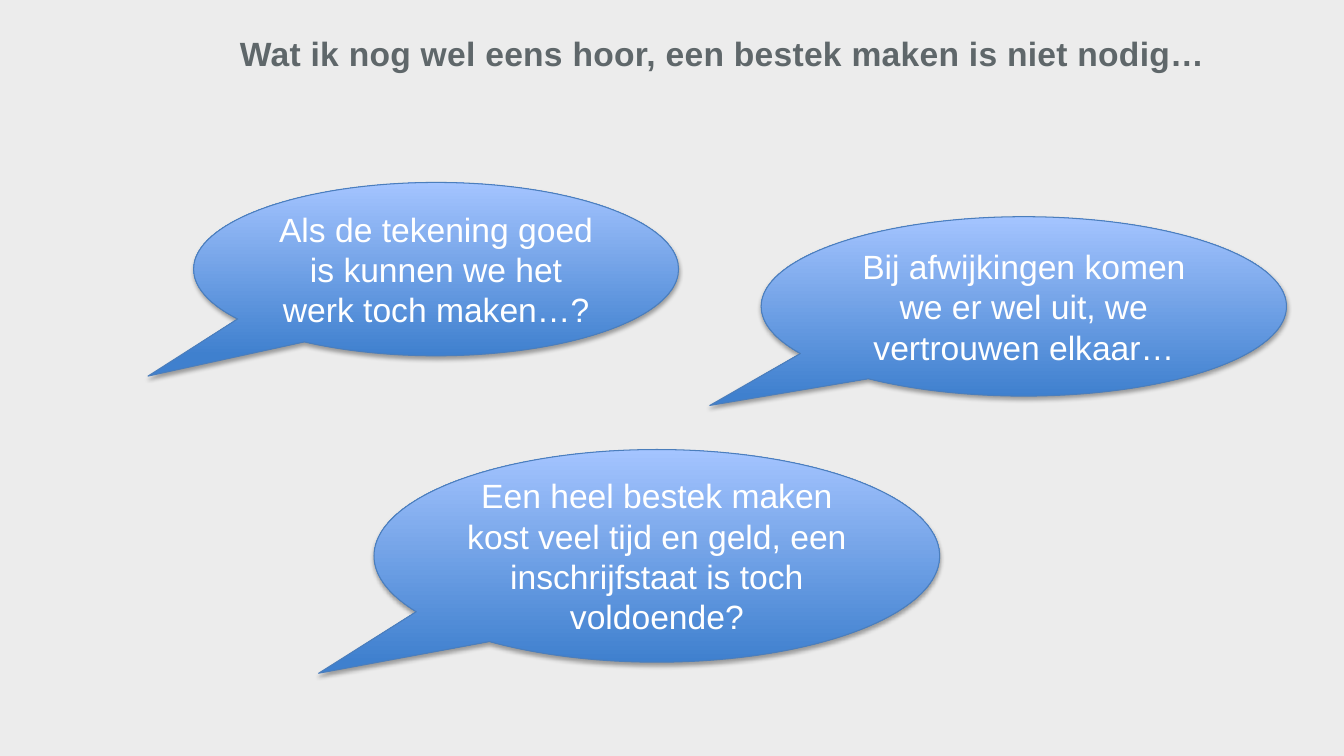
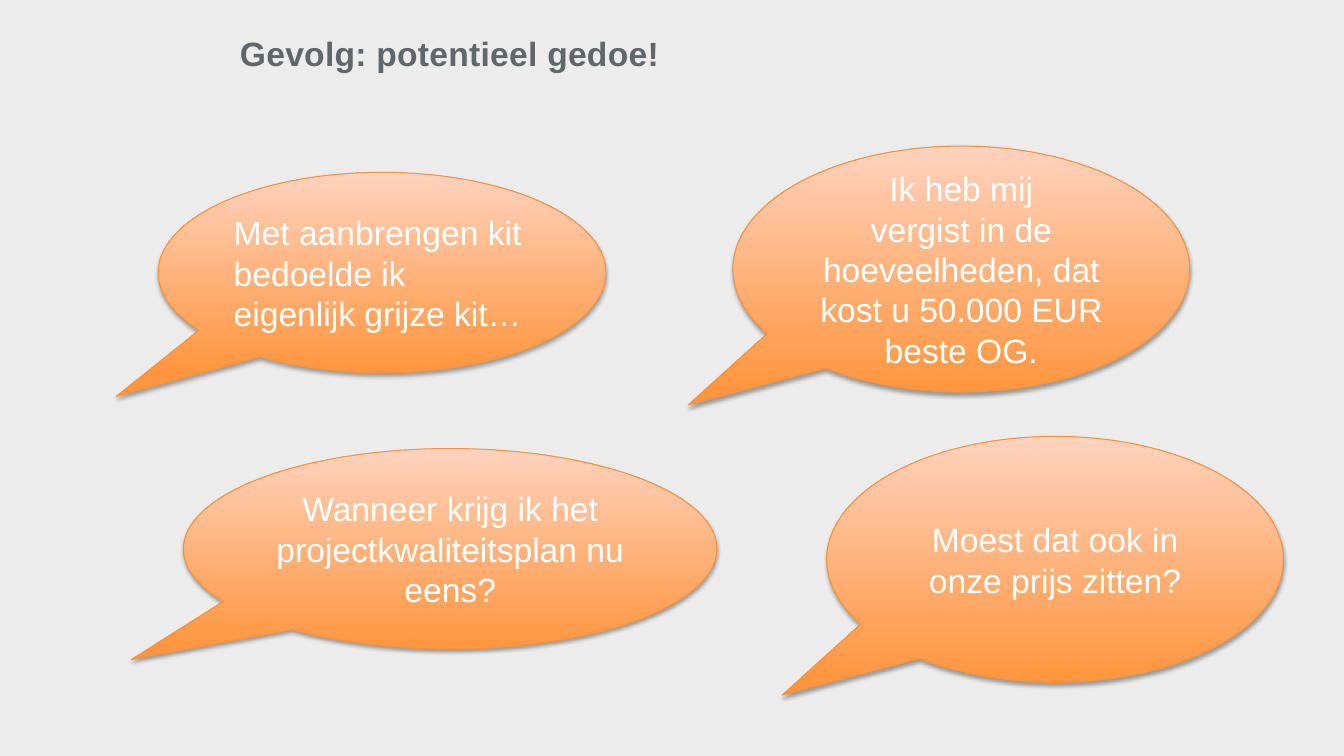
"""Build two slides of speech balloons about skipping building specifications."""
from lxml import etree
from pptx import Presentation
from pptx.dml.color import RGBColor
from pptx.enum import shapes, text
from pptx.oxml import ns
from pptx.util import Inches, Pt

BACKGROUND = RGBColor(0xEC, 0xEC, 0xEC)
TITLE_GREY = RGBColor(0x5F, 0x67, 0x6A)
WHITE = RGBColor(0xFF, 0xFF, 0xFF)
BLUE = {
    "line": RGBColor(0x4B, 0x7E, 0xBC),
    "stops": (RGBColor(0x3F, 0x80, 0xCE), RGBColor(0xA4, 0xC4, 0xFF)),
}
ORANGE = {
    "line": RGBColor(0xF6, 0x92, 0x40),
    "stops": (RGBColor(0xFF, 0x95, 0x3E), RGBColor(0xFF, 0xD2, 0xBD)),
}
LEFT, CENTER = text.PP_ALIGN.LEFT, text.PP_ALIGN.CENTER
LONG_TAIL = (-0.594, 0.617)
SHORT_TAIL = (-0.598, 0.552)

SLIDES = [
    ("Wat ik nog wel eens hoor, een bestek maken is niet nodig…", BLUE, [
        ((1.92, 1.81, 4.81, 1.72), LONG_TAIL, CENTER,
         ["Als de tekening goed is kunnen we het werk toch maken…?"]),
        ((7.55, 2.15, 5.21, 1.78), SHORT_TAIL, CENTER,
         ["Bij afwijkingen komen we er wel uit, we vertrouwen elkaar…"]),
        ((3.71, 4.46, 5.61, 2.11), SHORT_TAIL, CENTER,
         ["Een heel bestek maken kost veel tijd en geld, een inschrijfstaat is toch voldoende?"]),
    ]),
    ("Gevolg: potentieel gedoe!", ORANGE, [
        ((1.57, 1.71, 4.44, 1.99), LONG_TAIL, LEFT,
         ["Met aanbrengen kit bedoelde ik eigenlijk grijze kit…"]),
        ((7.27, 1.45, 4.53, 2.44), SHORT_TAIL, CENTER,
         ["Ik heb mij", "vergist in de hoeveelheden, dat kost u 50.000 EUR beste OG."]),
        ((1.82, 4.45, 5.29, 1.99), SHORT_TAIL, CENTER,
         ["Wanneer krijg ik het projectkwaliteitsplan nu eens?"]),
        ((8.2, 4.33, 4.53, 2.44), SHORT_TAIL, CENTER,
         ["Moest dat ook in onze prijs zitten?"]),
    ]),
]


def write_text(shape, lines, color=WHITE, bold=False, align=LEFT,
               anchor=text.MSO_ANCHOR.MIDDLE, spacing=0):
    frame = shape.text_frame
    frame.word_wrap = True
    frame.auto_size = text.MSO_AUTO_SIZE.NONE
    frame.vertical_anchor = anchor
    for index, line in enumerate(lines):
        paragraph = frame.add_paragraph() if index else frame.paragraphs[0]
        paragraph.alignment = align
        run = paragraph.add_run()
        run.text = line
        run.font.name = "Arial"
        run.font.size = Pt(24)
        run.font.bold = bold
        run.font.color.rgb = color
        if spacing:
            run._r.get_or_add_rPr().set("spc", str(round(spacing * 100)))


def add_balloon(slide, box, tail, palette):
    balloon = slide.shapes.add_shape(
        shapes.MSO_SHAPE.OVAL_CALLOUT, *[Inches(length) for length in box])
    balloon.adjustments[0], balloon.adjustments[1] = tail
    balloon.fill.gradient()
    balloon.fill.gradient_angle = 90
    for stop, color in zip(balloon.fill.gradient_stops, palette["stops"]):
        stop.color.rgb = color
    balloon.line.color.rgb = palette["line"]
    balloon.line.width = Pt(0.75)
    balloon.shadow.inherit = False
    effects = balloon._element.spPr.find(ns.qn("a:effectLst"))
    shadow = etree.SubElement(
        effects, ns.qn("a:outerShdw"), blurRad=str(Pt(3.1)), dist=str(Pt(1.8)),
        dir="5400000", rotWithShape="0")
    shade = etree.SubElement(shadow, ns.qn("a:srgbClr"), val="000000")
    etree.SubElement(shade, ns.qn("a:alpha"), val="35000")
    return balloon


presentation = Presentation()
presentation.slide_width = Inches(13.33)
presentation.slide_height = Inches(7.5)
master_fill = presentation.slide_master.background.fill
master_fill.solid()
master_fill.fore_color.rgb = BACKGROUND
title_only = presentation.slide_layouts[5]

for heading, palette, balloons in SLIDES:
    slide = presentation.slides.add_slide(title_only)
    title = slide.shapes.title
    title.left, title.top = Inches(2.28), Inches(-0.04)
    title.width, title.height = Inches(9.98), Inches(0.93)
    title.text_frame.margin_left = title.text_frame.margin_right = Inches(0.1)
    title.text_frame.margin_top = Inches(0.28)
    title.text_frame.margin_bottom = Inches(0.16)
    write_text(title, [heading], color=TITLE_GREY, bold=True,
               anchor=text.MSO_ANCHOR.BOTTOM, spacing=0.2)
    for box, tail, align, lines in balloons:
        balloon = add_balloon(slide, box, tail, palette)
        write_text(balloon, lines, align=align)

presentation.save("out.pptx")
